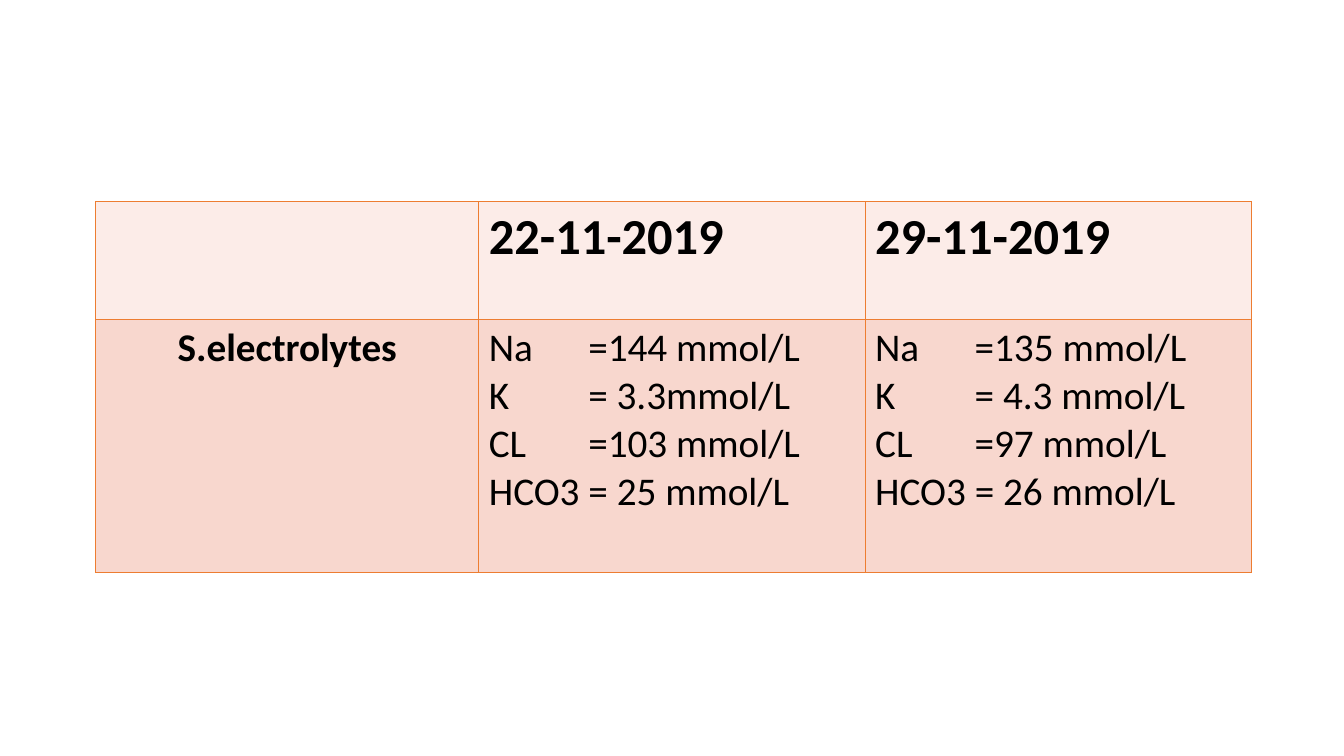
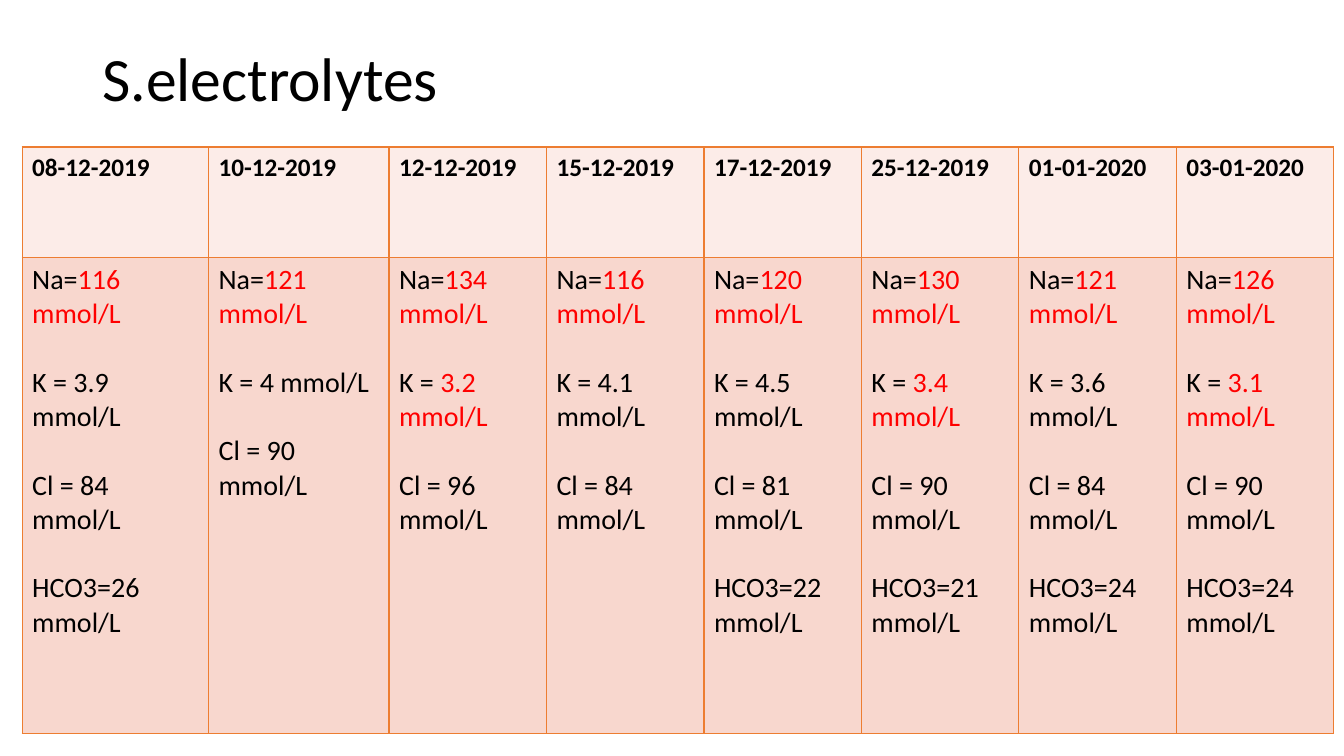
"""Build two slides of serum electrolyte results as tables."""
from dataclasses import dataclass
from typing import Optional

from lxml import etree
from pptx import Presentation
from pptx.dml import color
from pptx.enum import text as t
from pptx.oxml import ns
from pptx.util import Pt

FONT, BLACK, RED = "Calibri", "000000", "FF0000"
HEADER_FILL, BODY_FILL, BORDER = "FCECE8", "F8D7CE", "ED7D31"
TITLE = "S.electrolytes"
LOWER_LIMITS = {"Na=": 135, "K = ": 3.5}

Run = tuple[str, str]
Line = list[Run]


@dataclass
class Entry:
    """Content and format of one table cell."""
    lines: list[Line]
    size: float
    bold: bool = False
    align: t.PP_ALIGN = t.PP_ALIGN.LEFT
    gap: float = 0
    tab: Optional[float] = None


@dataclass
class Sample:
    """Results of one blood sample."""
    date: str
    sodium: str
    potassium: str
    chloride: str
    bicarbonate: Optional[str] = None


SAMPLES = [
    Sample("08-12-2019", "116", "3.9", "84", "26"),
    Sample("10-12-2019", "121", "4", "90"),
    Sample("12-12-2019", "134", "3.2", "96"),
    Sample("15-12-2019", "116", "4.1", "84"),
    Sample("17-12-2019", "120", "4.5", "81", "22"),
    Sample("25-12-2019", "130", "3.4", "90", "21"),
    Sample("01-01-2020", "121", "3.6", "84", "24"),
    Sample("03-01-2020", "126", "3.1", "90", "24"),
]

FIRST_RESULTS = {
    "22-11-2019": ["Na\t=144 mmol/L", "K\t= 3.3mmol/L", "CL\t=103 mmol/L", "HCO3 = 25 mmol/L"],
    "29-11-2019": ["Na\t=135 mmol/L", "K\t= 4.3 mmol/L", "CL\t=97 mmol/L", "HCO3 = 26 mmol/L"],
}


def rgb(value: str) -> color.RGBColor:
    """Turn a hex string into a colour."""
    return color.RGBColor.from_string(value)


def plain(*lines: str) -> list[Line]:
    """Make black single-run lines."""
    return [[(line, BLACK)] for line in lines]


def write(frame, lines: list[Line], *, size: float, bold: bool = False,
          align: t.PP_ALIGN = t.PP_ALIGN.LEFT, gap: float = 0,
          tab: Optional[float] = None, spacing: float = 1.0) -> None:
    """Fill a text frame with formatted lines."""
    for index, line in enumerate(lines):
        paragraph = frame.add_paragraph() if index else frame.paragraphs[0]
        paragraph.alignment = align
        paragraph.line_spacing = spacing
        paragraph.space_after = Pt(gap)
        for words, tint in line:
            run = paragraph.add_run()
            run.text = words
            run.font.name, run.font.size, run.font.bold = FONT, Pt(size), bold
            run.font.color.rgb = rgb(tint)
        if tab is not None:
            stops = etree.SubElement(paragraph.alignment and paragraph._p.get_or_add_pPr(),
                                     ns.qn("a:tabLst"))
            etree.SubElement(stops, ns.qn("a:tab"), pos=str(Pt(tab)), algn="l")


def outline(cell) -> None:
    """Draw a border on all four sides of a cell."""
    properties = cell._tc.get_or_add_tcPr()
    for side in ("lnL", "lnR", "lnT", "lnB"):
        edge = etree.SubElement(properties, ns.qn(f"a:{side}"), w=str(Pt(1)))
        fill = etree.SubElement(edge, ns.qn("a:solidFill"))
        etree.SubElement(fill, ns.qn("a:srgbClr"), val=BORDER)


def add_results(slide, left: float, top: float, widths: list[float],
                heights: list[float], rows: list[list[Entry]]) -> None:
    """Add a table with a header row and a body row."""
    table = slide.shapes.add_table(len(heights), len(widths), Pt(left), Pt(top),
                                   Pt(sum(widths)), Pt(sum(heights))).table
    table.first_row = table.horz_banding = False
    for column, width in zip(table.columns, widths):
        column.width = Pt(width)
    for row, height, entries, fill in zip(table.rows, heights, rows, (HEADER_FILL, BODY_FILL)):
        row.height = Pt(height)
        for cell, entry in zip(row.cells, entries):
            outline(cell)
            cell.fill.solid()
            cell.fill.fore_color.rgb = rgb(fill)
            write(cell.text_frame, entry.lines, size=entry.size, bold=entry.bold,
                  align=entry.align, gap=entry.gap, tab=entry.tab)


def sample_lines(sample: Sample) -> list[Line]:
    """List the results of a sample, with low values in red."""
    results = {"Na=": sample.sodium, "K = ": sample.potassium,
               "Cl = ": sample.chloride, "HCO3=": sample.bicarbonate}
    return [[(label, BLACK),
             (f"{value} mmol/L", RED if float(value) < LOWER_LIMITS.get(label, 0) else BLACK)]
            for label, value in results.items() if value]


def build_first_results(slide) -> None:
    """Build the slide with the first two samples."""
    header = [Entry([], 36)] + [Entry(plain(date), 36, bold=True) for date in FIRST_RESULTS]
    body = [Entry(plain(TITLE), 28, bold=True, align=t.PP_ALIGN.CENTER)]
    body += [Entry(plain(*lines), 28, tab=71) for lines in FIRST_RESULTS.values()]
    add_results(slide, 68.4, 144, [273.6, 276, 276], [84, 181.2], [header, body])


def build_follow_up(slide) -> None:
    """Build the slide with the follow-up samples."""
    frame = slide.shapes.add_textbox(Pt(66), Pt(28.8), Pt(828), Pt(58.3)).text_frame
    frame.word_wrap = True
    frame.vertical_anchor = t.MSO_ANCHOR.MIDDLE
    write(frame, plain(TITLE), size=44, spacing=0.9)
    header = [Entry(plain(sample.date), 18, bold=True) for sample in SAMPLES]
    body = [Entry(sample_lines(sample), 20, gap=24.4) for sample in SAMPLES]
    widths = [133.2, 128.9] + [112.5] * (len(SAMPLES) - 2)
    add_results(slide, 15.8, 105, widths, [79.2, 339.8], [header, body])


def main() -> None:
    """Create and save the presentation."""
    deck = Presentation()
    deck.slide_width, deck.slide_height = Pt(960), Pt(540)
    for build in (build_first_results, build_follow_up):
        build(deck.slides.add_slide(deck.slide_layouts[6]))
    deck.save("out.pptx")


if __name__ == "__main__":
    main()
